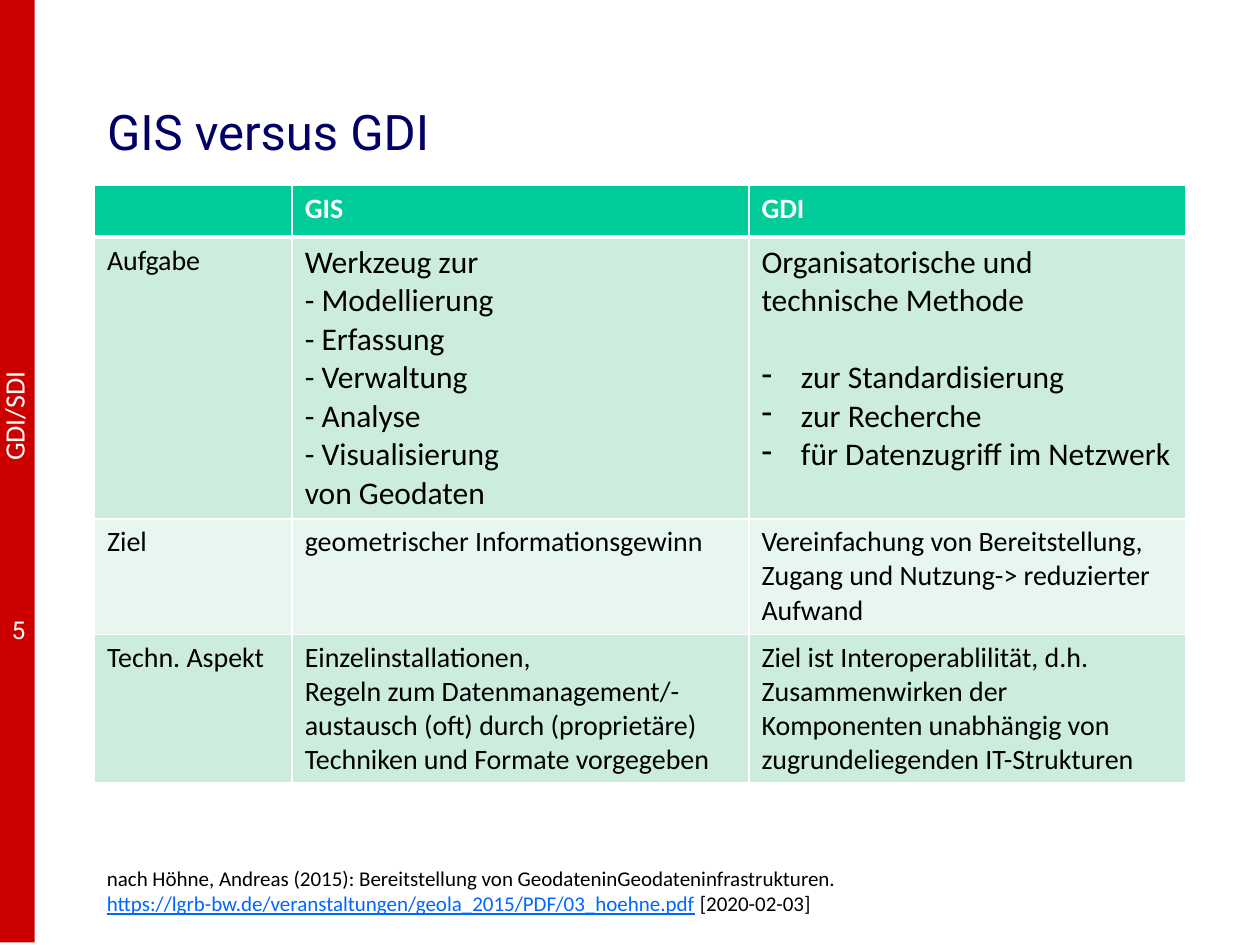
import pptx
import pptx.dml.color
import pptx.enum.shapes
import pptx.enum.text
import pptx.oxml.ns
import pptx.util
from lxml import etree

Pt = pptx.util.Pt
ANCHOR = pptx.enum.text.MSO_ANCHOR
ALIGN = pptx.enum.text.PP_ALIGN

WHITE, BLACK, NAVY, RED, LINK = "FFFFFF", "000000", "000066", "CC0000", "0066FF"
HEADER, BAND_DARK, BAND_LIGHT = "00CC99", "CCECDE", "E7F6EF"

COLUMN_WIDTHS = (113, 261, 249.5)
ROW_HEIGHTS = (29.5, 161, 66, 85)
DASH_INDENT = 22.5
COMPARISON = (
    ([], ["GIS"], ["GDI"]),
    (
        ["Aufgabe"],
        ["Werkzeug zur \v- Modellierung\v- Erfassung\v- Verwaltung\v- Analyse\v- Visualisierung",
         "von Geodaten"],
        ["Organisatorische und technische Methode", "* zur Standardisierung",
         "* zur Recherche", "* für Datenzugriff im Netzwerk"],
    ),
    (
        ["Ziel"],
        ["geometrischer Informationsgewinn"],
        ["Vereinfachung von Bereitstellung, Zugang und Nutzung-> reduzierter Aufwand"],
    ),
    (
        ["Techn. Aspekt"],
        ["Einzelinstallationen,",
         "Regeln zum Datenmanagement/-austausch (oft) durch (proprietäre) "
         "Techniken und Formate vorgegeben"],
        ["Ziel ist Interoperablilität, d.h. Zusammenwirken der Komponenten "
         "unabhängig von zugrundeliegenden IT-Strukturen"],
    ),
)


def rgb(value):
    return pptx.dml.color.RGBColor.from_string(value)


def style(font, size, color, name="Calibri", bold=False):
    font.size, font.name, font.bold = Pt(size), name, bold
    font.color.rgb = rgb(color)


def add_label(slide, box, text, size, name, wrap=True, align=ALIGN.LEFT):
    label = slide.shapes.add_textbox(*map(Pt, box))
    label.text_frame.word_wrap = wrap
    paragraph = label.text_frame.paragraphs[0]
    paragraph.text, paragraph.alignment = text, align
    style(paragraph.font, size, WHITE, name)
    return label


def add_sidebar(slide, left, top, width, height):
    bar = slide.shapes.add_shape(
        pptx.enum.shapes.MSO_SHAPE.RECTANGLE, Pt(left), Pt(top), Pt(width), Pt(height))
    bar.shadow.inherit = False
    bar.fill.solid()
    bar.fill.fore_color.rgb = rgb(RED)
    bar.line.fill.background()
    topic = add_label(slide, (left - 25.2, top + 224, 66.2, 26.6),
                      "GDI/SDI", 16, "Calibri", wrap=False)
    topic.rotation = 270
    add_label(slide, (left - 8.6, top + 347.8, 30.2, 24), "5", 14, "Roboto", align=ALIGN.RIGHT)


def place_title(slide, left, top, width, height):
    title = slide.shapes.title
    title.left, title.top, title.width, title.height = map(Pt, (left, top, width, height))
    title.text_frame.vertical_anchor = ANCHOR.MIDDLE
    paragraph = title.text_frame.paragraphs[0]
    paragraph.text, paragraph.alignment = "GIS versus GDI", ALIGN.LEFT
    style(paragraph.font, 28, NAVY, "Roboto")


def add_dash(paragraph):
    properties = paragraph._p.get_or_add_pPr()
    properties.set("marL", str(Pt(DASH_INDENT)))
    properties.set("indent", str(-Pt(DASH_INDENT)))
    bullet = etree.SubElement(properties, pptx.oxml.ns.qn("a:buChar"))
    bullet.set("char", "-")


def add_borders(cell, row):
    qn = pptx.oxml.ns.qn
    widths = {"L": 1, "R": 1, "T": 3 if row == 1 else 1, "B": 3 if row == 0 else 1}
    for side, width in widths.items():
        border = etree.SubElement(cell._tc.get_or_add_tcPr(), qn("a:ln" + side), w=str(Pt(width)))
        solid = etree.SubElement(border, qn("a:solidFill"))
        etree.SubElement(solid, qn("a:srgbClr"), val=WHITE)


def fill_cell(cell, lines, row, column):
    add_borders(cell, row)
    cell.fill.solid()
    cell.fill.fore_color.rgb = rgb(HEADER if row == 0 else BAND_DARK if row % 2 else BAND_LIGHT)
    size = 18 if row == 1 and column > 0 else 16
    frame = cell.text_frame
    for index, line in enumerate(lines or [""]):
        paragraph = frame.paragraphs[0] if index == 0 else frame.add_paragraph()
        paragraph.text = line.removeprefix("* ")
        if line.startswith("* "):
            add_dash(paragraph)
        elif index + 1 < len(lines) and lines[index + 1].startswith("* "):
            paragraph.space_after = Pt(22)
        style(paragraph.font, size, BLACK if row else WHITE, bold=row == 0)


def add_comparison(slide, left, top):
    table = slide.shapes.add_table(
        len(ROW_HEIGHTS), len(COLUMN_WIDTHS), Pt(left), Pt(top),
        Pt(sum(COLUMN_WIDTHS)), Pt(sum(ROW_HEIGHTS))).table
    for column, width in zip(table.columns, COLUMN_WIDTHS):
        column.width = Pt(width)
    for row, (height, entries) in enumerate(zip(ROW_HEIGHTS, COMPARISON)):
        table.rows[row].height = Pt(height)
        for column, lines in enumerate(entries):
            fill_cell(table.cell(row, column), lines, row, column)


def add_reference(slide, left, top, width, height):
    reference = slide.shapes.add_textbox(Pt(left), Pt(top), Pt(width), Pt(height))
    reference.text_frame.word_wrap = True
    paragraph = reference.text_frame.paragraphs[0]
    pieces = (
        ("nach Höhne, Andreas (2015): Bereitstellung von GeodateninGeodateninfrastrukturen. ", BLACK),
        ("https://lgrb-bw.de/veranstaltungen/geola_2015/PDF/03_hoehne.pdf", LINK),
        (" [2020-02-03]", BLACK),
    )
    for text, color in pieces:
        run = paragraph.add_run()
        run.text = text
        style(run.font, 12, color)
        run.font.underline = color == LINK


def main():
    deck = pptx.Presentation()
    deck.slide_width, deck.slide_height = Pt(720), Pt(540)
    slide = deck.slides.add_slide(deck.slide_layouts[5])
    add_sidebar(slide, 0, 0, 19.8, 538.5)
    place_title(slide, 54, 48, 589, 54)
    add_comparison(slide, 54, 106)
    add_reference(slide, 54, 491, 590, 36)
    deck.save("out.pptx")


if __name__ == "__main__":
    main()
